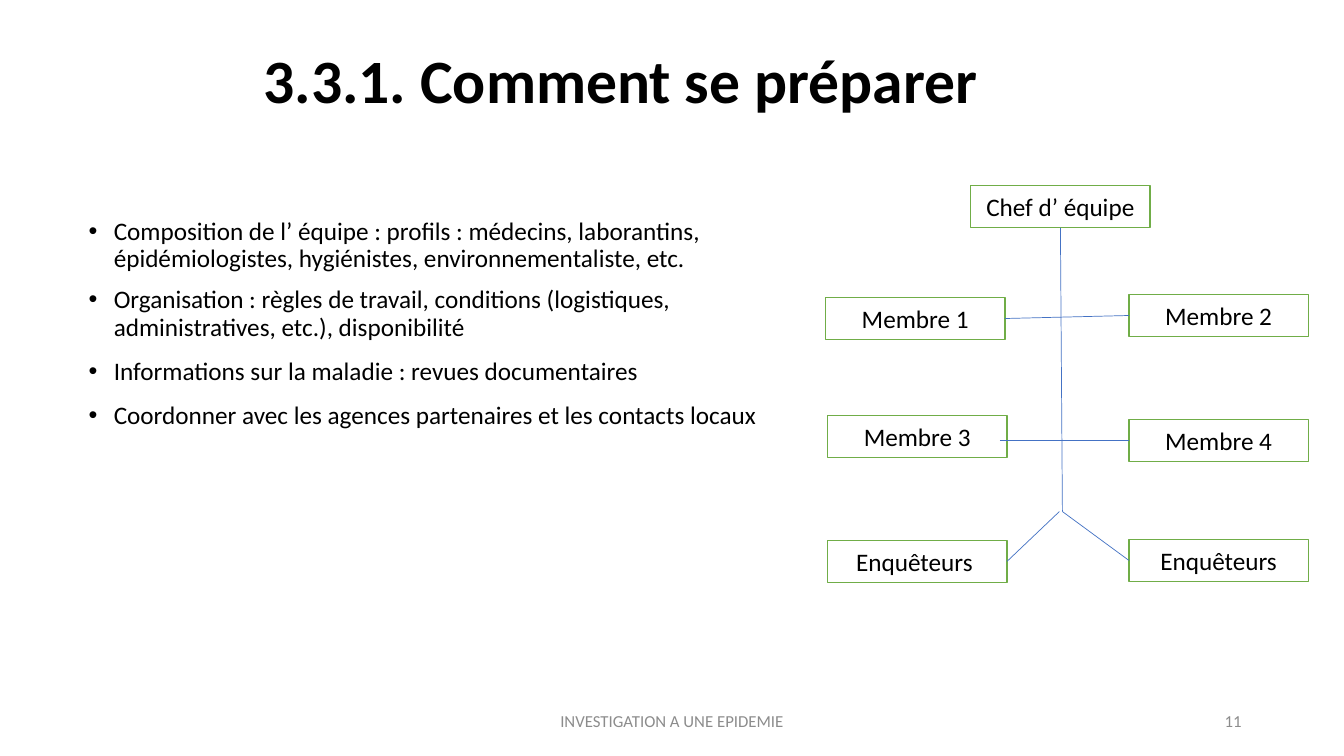
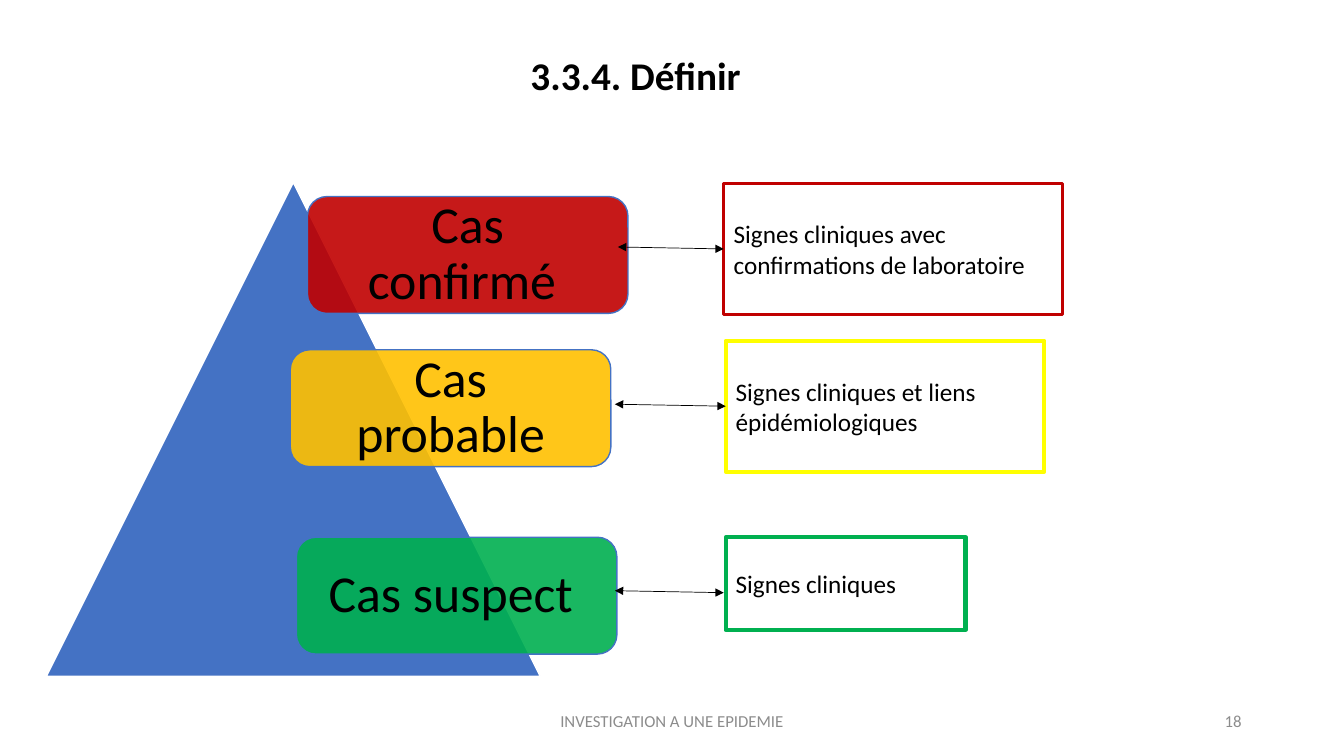
"""Build two slides on preparing an outbreak investigation and defining its cases."""
from pptx import Presentation
from pptx.dml.color import RGBColor
from pptx.enum.shapes import MSO_CONNECTOR, MSO_SHAPE
from pptx.enum.text import MSO_ANCHOR, PP_ALIGN
from pptx.oxml.ns import qn
from pptx.util import Inches, Pt
from lxml import etree

LEFT, CENTER, RIGHT = PP_ALIGN.LEFT, PP_ALIGN.CENTER, PP_ALIGN.RIGHT
TOP, MIDDLE = MSO_ANCHOR.TOP, MSO_ANCHOR.MIDDLE
RECTANGLE, ROUNDED = MSO_SHAPE.RECTANGLE, MSO_SHAPE.ROUNDED_RECTANGLE
TRIANGLE, STRAIGHT = MSO_SHAPE.ISOSCELES_TRIANGLE, MSO_CONNECTOR.STRAIGHT
BOTTOM_SIDE, LEFT_SIDE, RIGHT_SIDE = 2, 1, 3

FONT = "Calibri"
BLACK, WHITE, GREY = "000000", "FFFFFF", "8C8C8C"
BLUE, LEAF = "4472C4", "70AD47"
RED, AMBER, YELLOW, GREEN = "C00000", "FFC000", "FFFF00", "00B050"

deck = Presentation()
deck.slide_width, deck.slide_height = Inches(13.33), Inches(7.5)
COL, ROW = deck.slide_width / 160, deck.slide_height / 90


def add_box(slide, at, paragraphs, size=18, shape=None, fill=WHITE, outline=BLACK,
            weight=1, align=CENTER, anchor=MIDDLE, color=BLACK, bold=False, spacing=1.0):
    left, top, width, height = at
    frame = [round(n) for n in (left * COL, top * ROW, width * COL, height * ROW)]
    if shape is None:
        box = slide.shapes.add_textbox(*frame)
    else:
        box = slide.shapes.add_shape(shape, *frame)
        box.shadow.inherit = False
        box.fill.solid()
        box.fill.fore_color.rgb = RGBColor.from_string(fill)
        box.line.color.rgb = RGBColor.from_string(outline)
        box.line.width = Pt(weight)
    text = box.text_frame
    text.word_wrap = True
    text.vertical_anchor = anchor
    for index, words in enumerate(paragraphs):
        paragraph = text.add_paragraph() if index else text.paragraphs[0]
        paragraph.alignment = align
        paragraph.line_spacing = spacing
        run = paragraph.add_run()
        run.text = words
        run.font.name, run.font.size, run.font.bold = FONT, Pt(size), bold
        run.font.color.rgb = RGBColor.from_string(color)
    return box


def add_line(slide, start, end, color, begin_at=None, end_at=None, arrows=False):
    points = [round(n) for n in (start[0] * COL, start[1] * ROW, end[0] * COL, end[1] * ROW)]
    line = slide.shapes.add_connector(STRAIGHT, *points)
    line.line.color.rgb = RGBColor.from_string(color)
    line.line.width = Pt(0.5)
    if begin_at:
        line.begin_connect(*begin_at)
    if end_at:
        line.end_connect(*end_at)
    properties = line._element.spPr
    if arrows:
        for tip in ("a:headEnd", "a:tailEnd"):
            etree.SubElement(properties.find(qn("a:ln")), qn(tip), type="triangle")
    etree.SubElement(properties, qn("a:effectLst"))


headings = [
    ("3.3.1. Comment se préparer", 44, 18.3, 10.92, "11"),
    ("3.3.4. Définir", 28, 20.04, 9.6, "18"),
]
slides = []
for heading, size, left, height, number in headings:
    slide = deck.slides.add_slide(deck.slide_layouts[6])
    add_box(slide, (left, 4.44, 111.24, height), [heading], size, bold=True, spacing=0.9)
    add_box(slide, (53, 83.4, 54, 4.8), ["INVESTIGATION A UNE EPIDEMIE"], 12, color=GREY)
    add_box(slide, (113, 83.4, 36, 4.8), [number], 12, align=RIGHT, color=GREY)
    slides.append(slide)
preparation, definition = slides

steps = [
    "Composition de l’ équipe : profils : médecins, laborantins, épidémiologistes, "
    "hygiénistes, environnementaliste, etc.",
    "Organisation : règles de travail, conditions (logistiques, administratives, etc.), "
    "disponibilité",
    "Informations sur la maladie : revues documentaires",
    "Coordonner avec les agences partenaires et les contacts locaux",
]
step_list = add_box(preparation, (9.36, 25.44, 83.4, 37.2), steps,
                    align=LEFT, anchor=TOP, spacing=0.9)
for paragraph, gap in zip(step_list.text_frame.paragraphs, (10, 10, 12, 12)):
    paragraph.space_before = Pt(gap)
    indents = paragraph._p.get_or_add_pPr()
    indents.set("marL", str(Inches(0.25)))
    indents.set("indent", str(-Inches(0.25)))
    etree.SubElement(indents, qn("a:buFont"), typeface="Arial")
    etree.SubElement(indents, qn("a:buChar"), char="•")

roles = [
    ("Chef d’ équipe", 115.56, 22.08),
    ("Membre 1", 98.28, 35.4),
    ("Membre 2", 134.4, 35.04),
    ("Membre 3", 98.52, 49.44),
    ("Membre 4", 134.4, 49.92),
    ("Enquêteurs ", 98.52, 64.32),
    ("Enquêteurs", 134.4, 64.2),
]
chief, member_1, member_2, member_3, member_4, surveyors_left, surveyors_right = [
    add_box(preparation, (left, top, 21.36, 5.04), [role], shape=RECTANGLE, outline=LEAF)
    for role, left, top in roles
]
fork = (126.48, 60.9)
links = [
    ((119.64, 37.92), (134.4, 37.56), (member_1, RIGHT_SIDE), (member_2, LEFT_SIDE)),
    ((119.04, 52.44), (134.4, 52.44), None, (member_4, LEFT_SIDE)),
    ((126.24, 27.12), fork, (chief, BOTTOM_SIDE), None),
    ((119.88, 66.84), (126.12, 60.9), (surveyors_left, RIGHT_SIDE), None),
    (fork, (134.4, 66.72), None, (surveyors_right, LEFT_SIDE)),
]
for start, end, begin_at, end_at in links:
    add_line(preparation, start, end, BLUE, begin_at, end_at)

add_box(definition, (5.52, 21.72, 58.8, 58.8), [], shape=TRIANGLE, fill=BLUE, outline=WHITE)

cases = [
    ("Cas confirmé ", RED, 36.6, 23.4, "Signes cliniques avec confirmations de laboratoire",
     RED, 2.25, (86.16, 21.84, 40.32, 15.6), (73.56, 29.4), True),
    ("Cas probable", AMBER, 34.56, 41.64, "Signes cliniques et liens épidémiologiques",
     YELLOW, 3, (86.4, 40.56, 37.92, 15.6), (73.2, 48.12), True),
    ("Cas suspect ", GREEN, 35.28, 63.96, "Signes cliniques",
     GREEN, 3, (86.4, 63.96, 28.56, 11.04), (73.2, 70.32), False),
]
for case, fill, left, top, signs, outline, weight, signs_at, start, joined in cases:
    level = add_box(definition, (left, top, 38.16, 13.92), [case], 37, ROUNDED, fill, BLUE,
                    spacing=0.9)
    text = level.text_frame
    text.margin_left = text.margin_right = Inches(0.2)
    tint = level._element.spPr.find(qn("a:solidFill")).find(qn("a:srgbClr"))
    etree.SubElement(tint, qn("a:alpha"), val="90000")
    criteria = add_box(definition, signs_at, [signs], shape=RECTANGLE, outline=outline,
                       weight=weight, align=LEFT)
    add_line(definition, start, (86.16, start[1] + 0.24), BLACK,
             end_at=(criteria, LEFT_SIDE) if joined else None, arrows=True)

deck.save("out.pptx")
